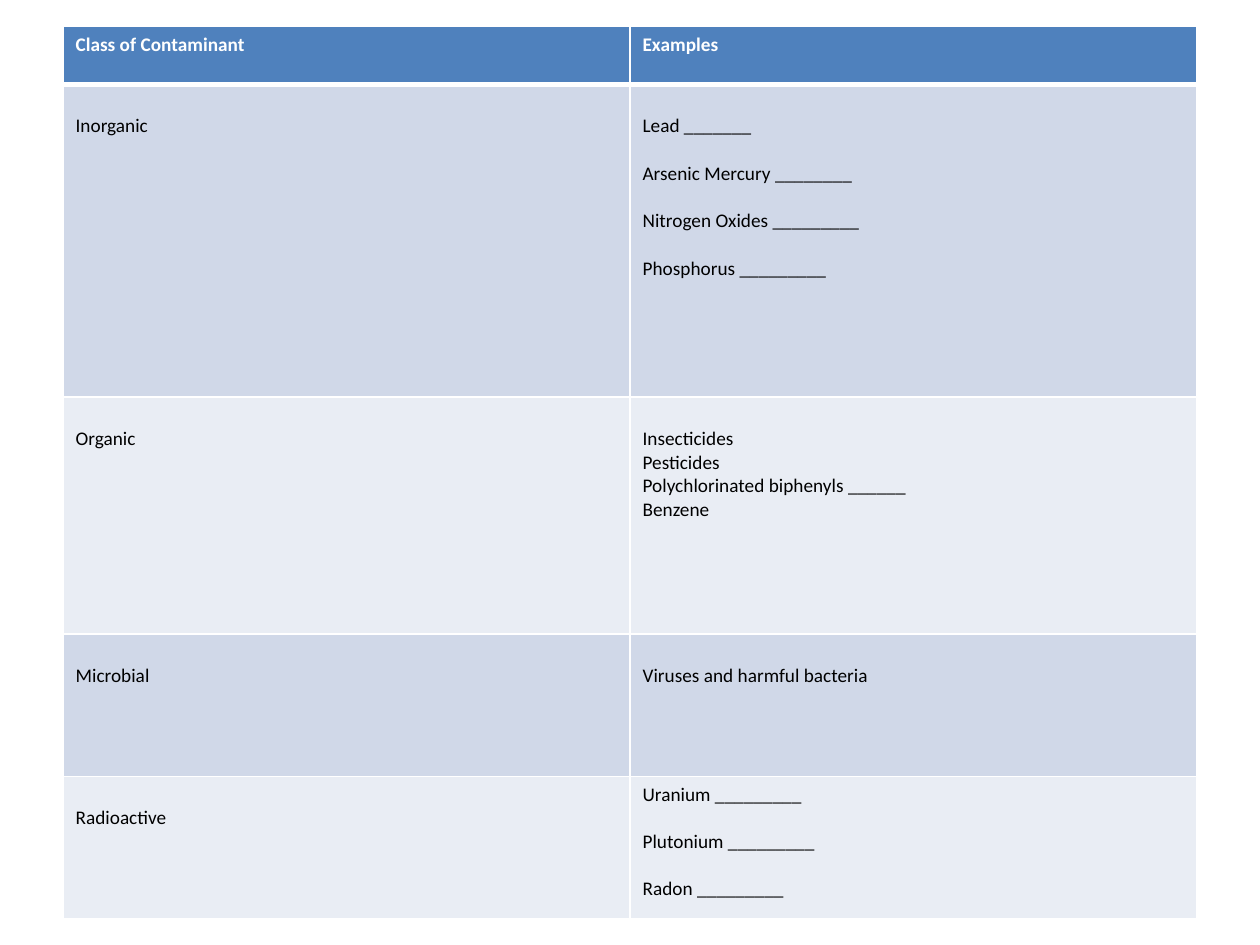
from lxml.etree import SubElement
from pptx import Presentation
from pptx.dml.color import RGBColor
from pptx.oxml.ns import qn
from pptx.util import Pt

FONT, TEXT_SIZE = "Calibri", 11
BLANK_LINE = 13.5
CELL_MARGIN = 3.6
WHITE, BLACK = "FFFFFF", "000000"
HEADER_FILL, DARK_BAND, LIGHT_BAND = "4F81BD", "D0D8E8", "E9EDF4"
COLUMN_WIDTH = 324
THIN, THICK = 1, 3

HEADER = ("Class of Contaminant", "Examples")
HEADER_HEIGHT = 33.1

# Row height, class, examples, blank line above the examples, gap between them
CONTAMINANTS = [
    (178.6, "Inorganic",
     ["Lead _______", "Arsenic Mercury ________",
      "Nitrogen Oxides _________", "Phosphorus _________"], BLANK_LINE, BLANK_LINE),
    (135.4, "Organic",
     ["Insecticides", "Pesticides",
      "Polychlorinated biphenyls ______", "Benzene"], BLANK_LINE, 0),
    (81.4, "Microbial", ["Viruses and harmful bacteria"], BLANK_LINE, 0),
    (81.4, "Radioactive",
     ["Uranium _________", "Plutonium _________", "Radon _________"], 0, BLANK_LINE),
]


def color(hex_string):
    return RGBColor.from_string(hex_string)


def add_borders(cell, top, bottom):
    properties = cell._tc.get_or_add_tcPr()
    for side, width in (("L", THIN), ("R", THIN), ("T", top), ("B", bottom)):
        line = SubElement(properties, qn(f"a:ln{side}"), w=str(Pt(width)))
        fill = SubElement(line, qn("a:solidFill"))
        SubElement(fill, qn("a:srgbClr"), val=WHITE)


def write_lines(cell, lines, text_color, bold, offset, gap):
    cell.margin_top = Pt(CELL_MARGIN + offset)
    frame = cell.text_frame
    for index, line in enumerate(lines):
        paragraph = frame.add_paragraph() if index else frame.paragraphs[0]
        paragraph.space_before = Pt(gap if index else 0)
        run = paragraph.add_run()
        run.text = line
        run.font.name = FONT
        run.font.size = Pt(TEXT_SIZE)
        run.font.bold = bold
        run.font.color.rgb = color(text_color)


def format_cell(cell, fill, top=THIN, bottom=THIN):
    add_borders(cell, top, bottom)
    cell.fill.solid()
    cell.fill.fore_color.rgb = color(fill)


def add_contaminant_table(slide):
    heights = [HEADER_HEIGHT] + [entry[0] for entry in CONTAMINANTS]
    table = slide.shapes.add_table(
        len(heights), len(HEADER), Pt(36), Pt(15.2),
        Pt(COLUMN_WIDTH * len(HEADER)), Pt(sum(heights))).table
    for column in table.columns:
        column.width = Pt(COLUMN_WIDTH)
    for row, height in zip(table.rows, heights):
        row.height = Pt(height)

    # Header row
    for cell, label in zip(table.rows[0].cells, HEADER):
        format_cell(cell, HEADER_FILL, bottom=THICK)
        write_lines(cell, [label], WHITE, True, 0, 0)

    # Banded body rows
    for number, (_, name, examples, offset, gap) in enumerate(CONTAMINANTS, 1):
        name_cell, examples_cell = table.rows[number].cells
        for cell in (name_cell, examples_cell):
            format_cell(cell, DARK_BAND if number % 2 else LIGHT_BAND,
                        top=THICK if number == 1 else THIN)
        write_lines(name_cell, [name], BLACK, False, BLANK_LINE, 0)
        write_lines(examples_cell, examples, BLACK, False, offset, gap)


def main():
    presentation = Presentation()
    presentation.slide_width, presentation.slide_height = Pt(720), Pt(540)
    slide = presentation.slides.add_slide(presentation.slide_layouts[6])
    add_contaminant_table(slide)
    presentation.save("out.pptx")


if __name__ == "__main__":
    main()
